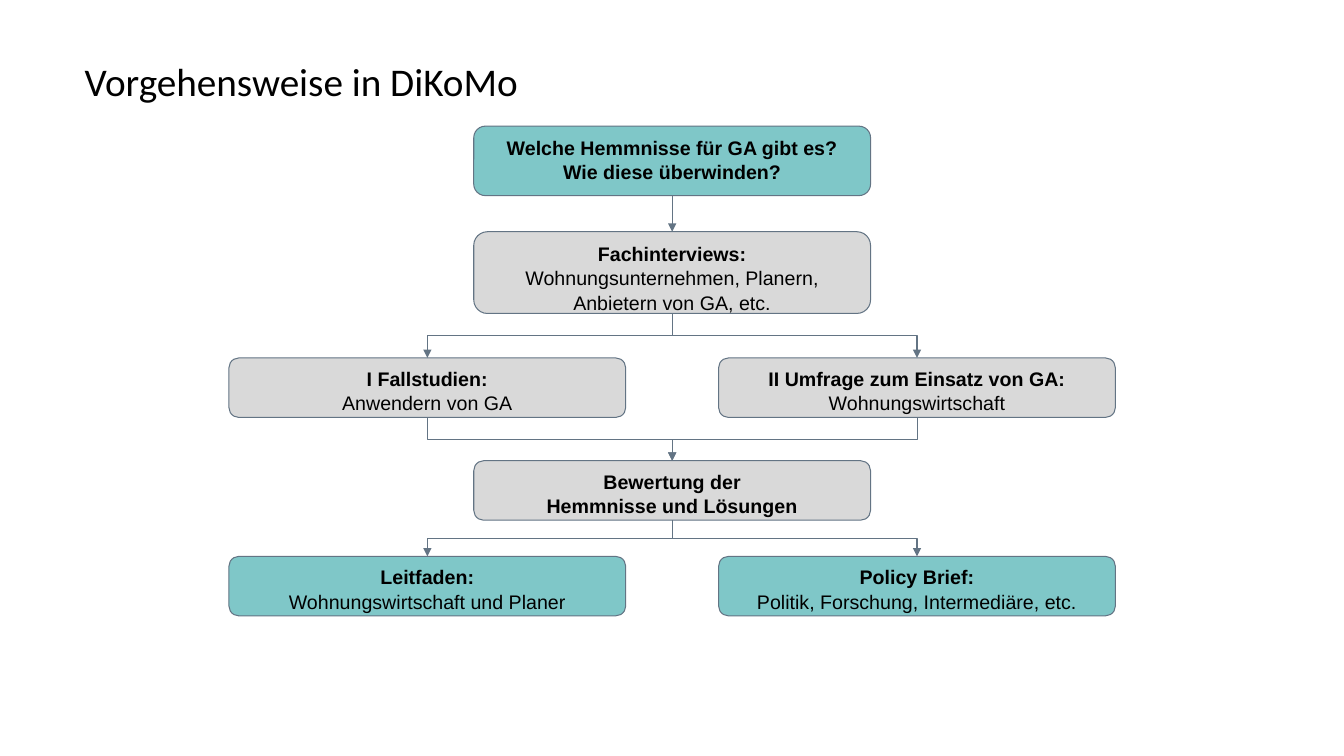
from lxml.etree import SubElement
from pptx import Presentation
from pptx.dml.color import RGBColor
from pptx.enum.dml import MSO_LINE
from pptx.enum.shapes import MSO_CONNECTOR, MSO_SHAPE
from pptx.enum.text import MSO_ANCHOR, PP_ALIGN
from pptx.oxml.ns import qn
from pptx.util import Cm, Pt

TEAL, GREY, LINE, BLACK = "009193", "D9D9D9", "637484", "000000"
BOX_WIDTH = 10
COLUMN_STEP = 6.17
BOTTOM_SITE, TOP_SITE = 2, 0

BOXES = {
    "question": (1, 3.18, 1.75, TEAL, ["Welche Hemmnisse für GA gibt es?", "Wie diese überwinden?"], []),
    "interviews": (1, 5.84, 2.06, GREY, ["Fachinterviews:"],
                   ["Wohnungsunternehmen, Planern, Anbietern von GA, etc."]),
    "cases": (0, 9.02, 1.5, GREY, ["I Fallstudien:"], ["Anwendern von GA"]),
    "survey": (2, 9.02, 1.5, GREY, ["II Umfrage zum Einsatz von GA:"], ["Wohnungswirtschaft"]),
    "rating": (1, 11.61, 1.5, GREY, ["Bewertung der", "Hemmnisse und Lösungen"], []),
    "guide": (0, 14.02, 1.5, TEAL, ["Leitfaden:"], ["Wohnungswirtschaft und Planer"]),
    "brief": (2, 14.02, 1.5, TEAL, ["Policy Brief:"], ["Politik, Forschung, Intermediäre, etc."]),
}
ARROWS = [
    ("question", "interviews"),
    ("interviews", "cases"),
    ("interviews", "survey"),
    ("cases", "rating"),
    ("survey", "rating"),
    ("rating", "brief"),
    ("rating", "guide"),
]


def color(value):
    """Return the colour for a hex string."""
    return RGBColor.from_string(value)


def write(paragraph, text, size=14, font="Arial", bold=False,
          align=PP_ALIGN.CENTER, spacing=1.04):
    """Put formatted text into a paragraph."""
    paragraph.alignment = align
    paragraph.line_spacing = spacing
    paragraph.space_before = paragraph.space_after = Pt(0)
    run = paragraph.add_run()
    run.text = text
    run.font.size = Pt(size)
    run.font.name = font
    run.font.bold = bold
    run.font.color.rgb = color(BLACK)


def add_title(slide, text, left, top, width, height):
    """Move and fill the title placeholder."""
    title = slide.shapes.title
    title.left, title.top, title.width, title.height = (
        Cm(value) for value in (left, top, width, height))
    frame = title.text_frame
    frame.margin_left = frame.margin_right = frame.margin_top = frame.margin_bottom = 0
    frame.vertical_anchor = MSO_ANCHOR.MIDDLE
    write(frame.paragraphs[0], text, size=28, font="Calibri", align=PP_ALIGN.LEFT, spacing=Pt(30))


def add_box(slide, left, top, height, fill, headings, details):
    """Add a rounded step with bold headings above plain details."""
    box = slide.shapes.add_shape(
        MSO_SHAPE.ROUNDED_RECTANGLE, Cm(left), Cm(top), Cm(BOX_WIDTH), Cm(height))
    box.shadow.inherit = False
    box.fill.solid()
    box.fill.fore_color.rgb = color(fill)
    if fill == TEAL:
        fill_color = box.fill._xPr.find(qn("a:solidFill"))[0]
        SubElement(fill_color, qn("a:alpha"), val="50000")
    box.line.color.rgb = color(LINE)
    box.line.width = Pt(0.75)
    frame = box.text_frame
    frame.word_wrap = True
    frame.vertical_anchor = MSO_ANCHOR.TOP
    for index, text in enumerate(headings + details):
        paragraph = frame.add_paragraph() if index else frame.paragraphs[0]
        write(paragraph, text, bold=index < len(headings))
    return box


def add_arrow(slide, source, target):
    """Join the bottom of one step to the top of another, bending halfway."""
    start_x, end_x = (box.left + box.width // 2 for box in (source, target))
    start_y, end_y = source.top + source.height, target.top
    kind = MSO_CONNECTOR.STRAIGHT if start_x == end_x else MSO_CONNECTOR.ELBOW
    arrow = slide.shapes.add_connector(kind, start_x, start_y, end_x, end_y)
    arrow.begin_connect(source, BOTTOM_SITE)
    arrow.end_connect(target, TOP_SITE)
    properties = arrow.element.spPr
    if start_x != end_x:
        arrow.width, arrow.height = end_y - start_y, abs(end_x - start_x)
        arrow.left = (start_x + end_x - arrow.width) // 2
        arrow.top = (start_y + end_y - arrow.height) // 2
        rightward = end_x > start_x
        transform = properties.find(qn("a:xfrm"))
        transform.set("rot", "16200000" if rightward else "5400000")
        transform.set("flipH", "1" if rightward else "0")
    arrow.line.color.rgb = color(LINE)
    arrow.line.width = Pt(0.75)
    arrow.line.dash_style = MSO_LINE.SOLID
    SubElement(properties.find(qn("a:ln")), qn("a:tailEnd"), type="triangle")
    SubElement(properties, qn("a:effectLst"))


def add_flow(slide, left):
    """Add all steps in three overlapping columns, then their arrows."""
    steps = {
        name: add_box(slide, left + column * COLUMN_STEP, *details)
        for name, (column, *details) in BOXES.items()
    }
    for source, target in ARROWS:
        add_arrow(slide, steps[source], steps[target])


def main():
    """Build and save the presentation."""
    presentation = Presentation()
    presentation.slide_width = Cm(33.87)
    presentation.slide_height = Cm(19.05)
    slide = presentation.slides.add_slide(presentation.slide_layouts[5])
    add_title(slide, "Vorgehensweise in DiKoMo", 2.13, 1.57, 27.99, 1.07)
    add_flow(slide, 5.77)
    presentation.save("out.pptx")


if __name__ == "__main__":
    main()
